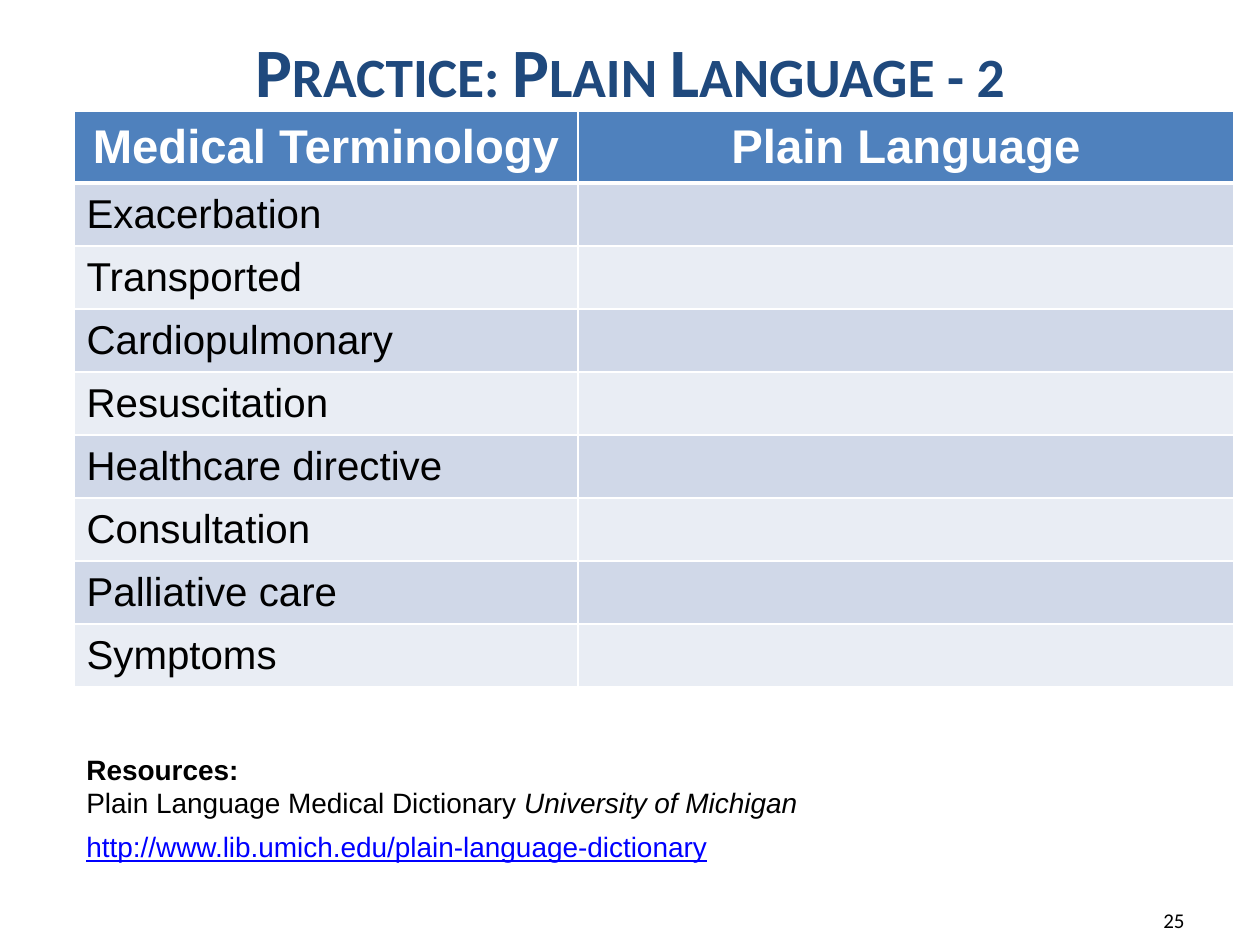
from dataclasses import dataclass

from lxml import etree
from pptx import Presentation
from pptx.dml.color import RGBColor
from pptx.enum.text import MSO_ANCHOR, MSO_AUTO_SIZE, PP_ALIGN
from pptx.oxml.ns import qn
from pptx.util import Pt

LEFT, MID, RIGHT = PP_ALIGN.LEFT, PP_ALIGN.CENTER, PP_ALIGN.RIGHT
CENTER = MSO_ANCHOR.MIDDLE
GROW = MSO_AUTO_SIZE.SHAPE_TO_FIT_TEXT
SCALE = 914400 / 126


@dataclass
class Theme:
    head: str = "Calibri"
    body: str = "Arial"
    navy: str = "1F497D"
    blue: str = "4F81BD"
    dark: str = "D0D8E8"
    light: str = "E9EDF4"
    white: str = "FFFFFF"
    black: str = "000000"
    link: str = "0000FF"
    title: float = 39.6
    top: int = 27
    cell: int = 23
    note: int = 16
    page: int = 12


theme = Theme()


def px(*sizes):
    return [round(size * SCALE) for size in sizes]


def write(para, text, face, size, color, bold=False, slant=False, under=False):
    run = para.add_run()
    run.text = text
    font = run.font
    font.name, font.size = face, Pt(size)
    font.bold, font.italic, font.underline = bold, slant, under
    font.color.rgb = RGBColor.from_string(color)
    return run


deck = Presentation()
deck.slide_width, deck.slide_height = px(1260, 945)
slide = deck.slides.add_slide(deck.slide_layouts[5])

title = slide.shapes.title
title.left, title.top, title.width, title.height = px(63, 21, 1134, 98)
frame = title.text_frame
frame.vertical_anchor = CENTER
para = frame.paragraphs[0]
para.alignment = MID
run = write(para, "Practice: Plain Language - 2", theme.head, theme.title, theme.navy, bold=True)
run.font._element.set("cap", "small")

page = slide.shapes.add_textbox(*px(903, 895, 294, 50))
frame = page.text_frame
frame.word_wrap = True
frame.vertical_anchor = CENTER
para = frame.paragraphs[0]
para.alignment = RIGHT
write(para, "25", theme.head, theme.page, theme.black)

rows = [("Medical Terminology", "Plain Language")] + [
    (term, "")
    for term in (
        "Exacerbation", "Transported", "Cardiopulmonary", "Resuscitation",
        "Healthcare directive", "Consultation", "Palliative care", "Symptoms",
    )
]
grid = slide.shapes.add_table(len(rows), 2, *px(74, 111, 1160, 574)).table
for col, wide in zip(grid.columns, px(504, 656)):
    col.width = wide
for i, texts in enumerate(rows):
    top = i == 0
    grid.rows[i].height = px(72 if top else 63)[0]
    fill = theme.blue if top else (theme.light, theme.dark)[i % 2]
    for j, text in enumerate(texts):
        cell = grid.cell(i, j)
        cell.vertical_anchor = CENTER
        para = cell.text_frame.paragraphs[0]
        para.alignment = MID if top else LEFT
        if text:
            write(para, text, theme.body, theme.top if top else theme.cell,
                  theme.white if top else theme.black, bold=top)
        props = cell._tc.get_or_add_tcPr()
        for side in ("lnL", "lnR", "lnT", "lnB"):
            thick = (top and side == "lnB") or (i == 1 and side == "lnT")
            line = etree.SubElement(props, qn("a:" + side), w=str(Pt(3 if thick else 1)))
            paint = etree.SubElement(line, qn("a:solidFill"))
            etree.SubElement(paint, qn("a:srgbClr"), val=theme.white)
        cell.fill.solid()
        cell.fill.fore_color.rgb = RGBColor.from_string(fill)

notes = slide.shapes.add_textbox(*px(74, 746, 951, 174))
frame = notes.text_frame
frame.word_wrap = False
frame.auto_size = GROW
lines = [
    (0, [("Resources:", theme.black, True, False, False)]),
    (6, [("Plain Language Medical Dictionary ", theme.black, False, False, False),
         ("University of Michigan", theme.black, False, True, False)]),
    (6, [("http://www.lib.umich.edu/plain-language-dictionary", theme.link, False, False, True)]),
]
for i, (gap, runs) in enumerate(lines):
    para = frame.add_paragraph() if i else frame.paragraphs[0]
    para.alignment = LEFT
    para.space_after = Pt(gap)
    for text, *style in runs:
        write(para, text, theme.body, theme.note, *style)

deck.save("out.pptx")
